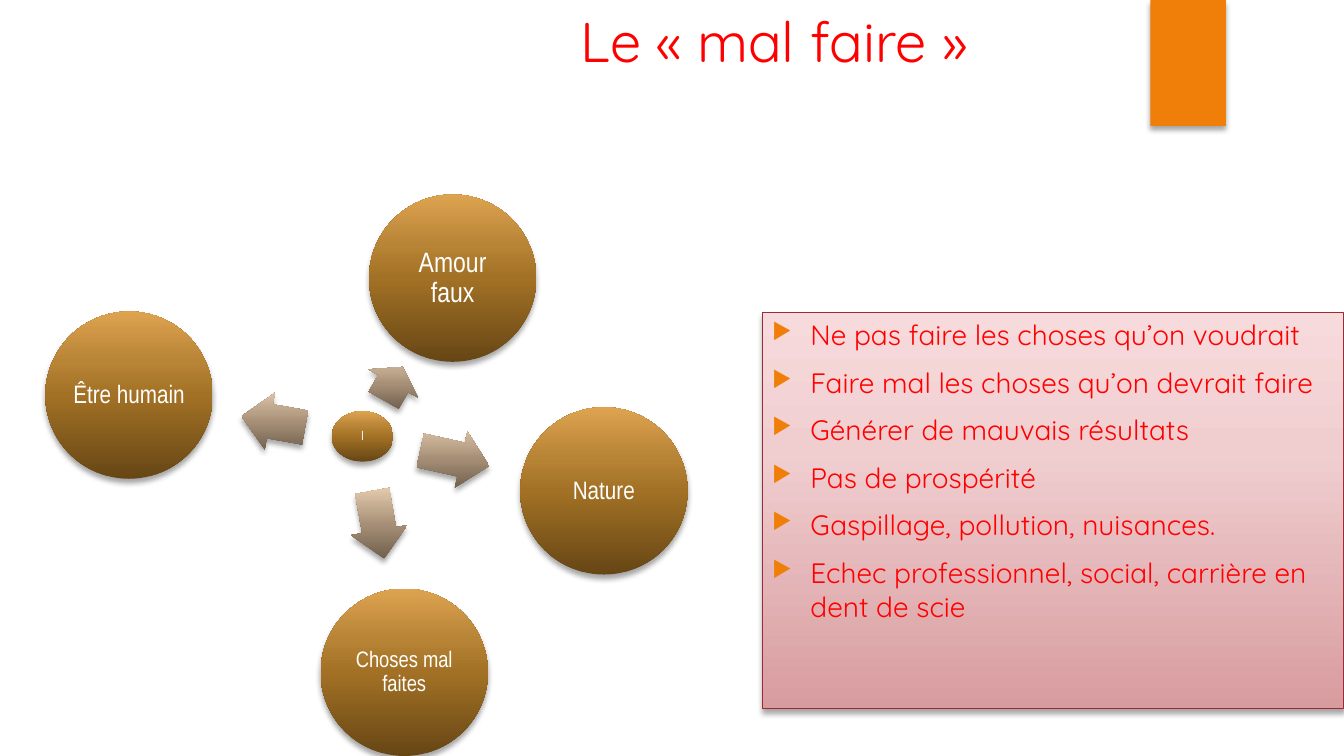
from dataclasses import dataclass

from lxml import etree
from pptx import Presentation
from pptx.dml.color import RGBColor
from pptx.enum.shapes import MSO_SHAPE
from pptx.enum.text import MSO_ANCHOR, MSO_AUTO_SIZE, PP_ALIGN
from pptx.oxml.ns import qn
from pptx.shapes.autoshape import Shape
from pptx.slide import Slide
from pptx.text.text import TextFrame, _Paragraph
from pptx.util import Inches, Pt

CENTER, LEFT = PP_ALIGN.CENTER, PP_ALIGN.LEFT
TOP, MIDDLE = MSO_ANCHOR.TOP, MSO_ANCHOR.MIDDLE
OVAL, ARROW, RECTANGLE = MSO_SHAPE.OVAL, MSO_SHAPE.RIGHT_ARROW, MSO_SHAPE.RECTANGLE
FIT_SHAPE = MSO_AUTO_SIZE.SHAPE_TO_FIT_TEXT

Stops = tuple[tuple[int, str], ...]


@dataclass(frozen=True)
class Theme:
    accent: str = "F07F09"
    red: str = "FF0000"
    white: str = "FFFFFF"
    border: str = "9F2936"
    shadow: str = "000000"
    bronze: Stops = ((0, "674615"), (50, "A27125"), (70, "B88436"), (100, "DDA350"))
    sand: Stops = ((0, "685948"), (50, "A68F76"), (70, "C0A88E"), (100, "E8CDAF"))
    rose: Stops = ((0, "D89C9F"), (65, "F0CED0"), (100, "F7DBDC"))
    text_font: str = "Quicksand"
    diagram_font: str = "Arial Narrow"
    title_size: int = 40
    list_size: int = 20


@dataclass(frozen=True)
class Box:
    left: float
    top: float
    width: float
    height: float


@dataclass(frozen=True)
class Circle:
    text: str
    size: int
    box: Box


@dataclass(frozen=True)
class Arrow:
    box: Box
    rotation: float


THEME = Theme()
DIAMETER = 1.66
TITLE = "Le «\u00a0mal faire\u00a0»"
CIRCLES = (
    Circle("l", 9, Box(3.29, 4.08, 0.61, 0.5)),
    Circle("Amour faux", 20, Box(3.66, 1.93, DIAMETER, DIAMETER)),
    Circle("Nature", 18, Box(5.16, 4.04, DIAMETER, DIAMETER)),
    Circle("Choses mal faites", 16, Box(3.18, 5.84, DIAMETER, DIAMETER)),
    Circle("Être humain", 18, Box(0.45, 3.09, DIAMETER, DIAMETER)),
)
ARROWS = (
    Arrow(Box(3.71, 3.52, 0.38, 0.57), 299.7),
    Arrow(Box(4.16, 4.26, 0.7, 0.57), 12.6),
    Arrow(Box(3.41, 4.92, 0.68, 0.57), 79.9),
    Arrow(Box(2.39, 3.9, 0.64, 0.57), 190.1),
)
CONSEQUENCES = (
    "Ne pas faire les choses qu’on voudrait",
    "Faire mal les choses qu’on devrait faire",
    "Générer de mauvais résultats",
    "Pas de prospérité",
    "Gaspillage, pollution, nuisances.",
    "Echec professionnel, social, carrière en dent de scie",
)


def add_element(parent: etree._Element, tag: str, **attributes: str) -> etree._Element:
    return etree.SubElement(parent, qn(tag), attributes)


def set_gradient(shape: Shape, stops: Stops) -> None:
    shape.fill.gradient()
    shape.fill.gradient_angle = 90
    gradient = shape._element.spPr.find(qn("a:gradFill"))
    gradient.set("rotWithShape", "0")
    stop_list = gradient.find(qn("a:gsLst"))
    for old_stop in list(stop_list):
        stop_list.remove(old_stop)
    for position, color in stops:
        stop = add_element(stop_list, "a:gs", pos=str(position * 1000))
        add_element(stop, "a:srgbClr", val=color)


def add_shadow(shape: Shape) -> None:
    shape.shadow.inherit = False
    effects = shape._element.spPr.find(qn("a:effectLst"))
    shadow = add_element(effects, "a:outerShdw", blurRad=str(Pt(4)), dist=str(Pt(3)),
                         dir="5400000", rotWithShape="0")
    color = add_element(shadow, "a:srgbClr", val=THEME.shadow)
    add_element(color, "a:alpha", val="35000")


def add_figure(slide: Slide, kind: MSO_SHAPE, box: Box) -> Shape:
    shape = slide.shapes.add_shape(kind, Inches(box.left), Inches(box.top),
                                   Inches(box.width), Inches(box.height))
    shape.line.fill.background()
    add_shadow(shape)
    return shape


def style_paragraph(paragraph: _Paragraph, font: str, size: int, color: str,
                    alignment: PP_ALIGN) -> None:
    paragraph.alignment = alignment
    for run in paragraph.runs:
        run.font.name = font
        run.font.size = Pt(size)
        run.font.color.rgb = RGBColor.from_string(color)


def set_insets(text_frame: TextFrame, inset: float) -> None:
    text_frame.margin_left = text_frame.margin_right = Inches(inset)
    text_frame.margin_top = text_frame.margin_bottom = Inches(inset)


def add_circle(slide: Slide, circle: Circle) -> None:
    shape = add_figure(slide, OVAL, circle.box)
    set_gradient(shape, THEME.bronze)
    text_frame = shape.text_frame
    text_frame.text = circle.text
    text_frame.word_wrap = True
    text_frame.vertical_anchor = MIDDLE
    set_insets(text_frame, 0.03)
    paragraph = text_frame.paragraphs[0]
    paragraph.line_spacing = 0.9
    style_paragraph(paragraph, THEME.diagram_font, circle.size, THEME.white, CENTER)


def add_arrow(slide: Slide, arrow: Arrow) -> None:
    shape = add_figure(slide, ARROW, arrow.box)
    shape.adjustments[0] = 0.6
    shape.adjustments[1] = 0.5
    shape.rotation = arrow.rotation
    set_gradient(shape, THEME.sand)


def add_bullet(paragraph: _Paragraph) -> None:
    properties = paragraph._p.get_or_add_pPr()
    properties.set("marL", str(Inches(0.38)))
    properties.set("indent", str(Inches(-0.38)))
    color = add_element(properties, "a:buClr")
    add_element(color, "a:srgbClr", val=THEME.accent)
    add_element(properties, "a:buSzPct", val="80000")
    add_element(properties, "a:buChar", char="▶")


def add_consequences(slide: Slide) -> None:
    shape = add_figure(slide, RECTANGLE, Box(7.56, 3.1, 5.77, 3.93))
    set_gradient(shape, THEME.rose)
    shape.line.color.rgb = RGBColor.from_string(THEME.border)
    shape.line.width = Pt(0.75)
    text_frame = shape.text_frame
    text_frame.text = "\n".join(CONSEQUENCES)
    text_frame.word_wrap = True
    text_frame.vertical_anchor = TOP
    for index, paragraph in enumerate(text_frame.paragraphs):
        add_bullet(paragraph)
        paragraph.space_before = Pt(10 if index else 0)
        style_paragraph(paragraph, THEME.text_font, THEME.list_size, THEME.red, LEFT)


def add_title(slide: Slide) -> None:
    title = slide.shapes.title
    title.left, title.top = Inches(5.6), Inches(0.01)
    title.width, title.height = Inches(4.15), Inches(0.77)
    text_frame = title.text_frame
    text_frame.text = TITLE
    text_frame.word_wrap = False
    text_frame.auto_size = FIT_SHAPE
    text_frame.vertical_anchor = TOP
    style_paragraph(text_frame.paragraphs[0], THEME.text_font, THEME.title_size,
                    THEME.red, CENTER)


def main() -> None:
    """Build the slide on the consequences of doing things badly."""
    presentation = Presentation()
    presentation.slide_width = Inches(13.33)
    presentation.slide_height = Inches(7.5)
    slide = presentation.slides.add_slide(presentation.slide_layouts[5])
    add_title(slide)
    tab = add_figure(slide, RECTANGLE, Box(11.41, 0, 0.75, 1.25))
    tab.fill.solid()
    tab.fill.fore_color.rgb = RGBColor.from_string(THEME.accent)
    for arrow in ARROWS:
        add_arrow(slide, arrow)
    for circle in CIRCLES:
        add_circle(slide, circle)
    add_consequences(slide)
    presentation.save("out.pptx")


if __name__ == "__main__":
    main()
